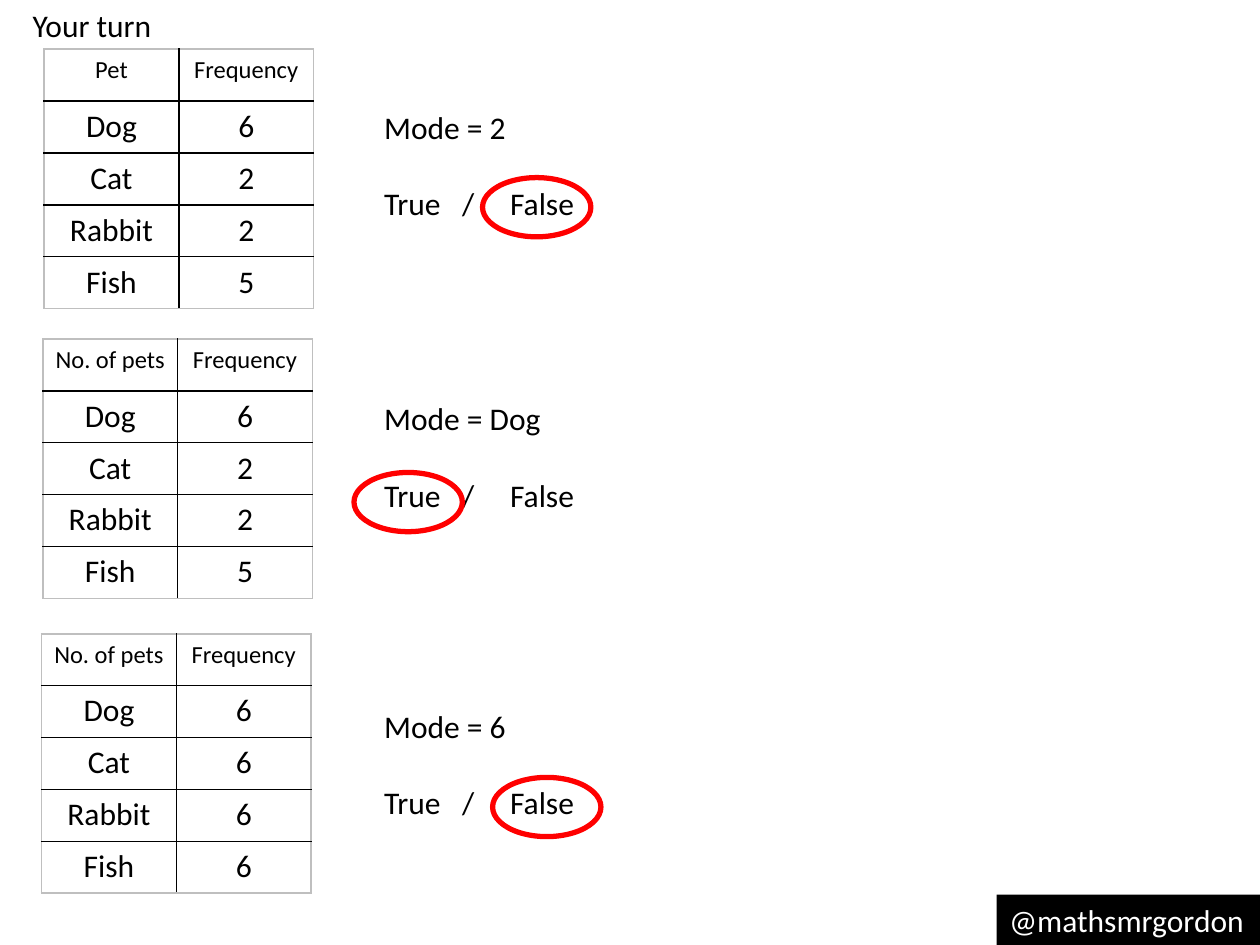
"""Build a worksheet slide with three frequency tables and true or false answers."""
import pptx
import pptx.dml.color
import pptx.enum.shapes
import pptx.enum.text
import pptx.oxml
import pptx.oxml.ns
import pptx.util

BLACK = pptx.dml.color.RGBColor(0x00, 0x00, 0x00)
WHITE = pptx.dml.color.RGBColor(0xFF, 0xFF, 0xFF)
RED = pptx.dml.color.RGBColor(0xFF, 0x00, 0x00)
GREY = pptx.dml.color.RGBColor(0xBF, 0xBF, 0xBF)

TITLE = "Your turn"
HANDLE = "@mathsmrgordon"
ANSWERS = "True\t/\tFalse"
PETS = ["Dog", "Cat", "Rabbit", "Fish"]
QUESTIONS = [
    {"heading": "Pet", "counts": [6, 2, 2, 5], "table": (35, 39),
     "claim": "Mode = 2", "claim_top": 81, "ring": (383, 141)},
    {"heading": "No. of pets", "counts": [6, 2, 2, 5], "table": (34, 269),
     "claim": "Mode = Dog", "claim_top": 312, "ring": (281, 375)},
    {"heading": "No. of pets", "counts": [6, 6, 6, 6], "table": (33, 503),
     "claim": "Mode = 6", "claim_top": 556, "ring": (391, 617)},
]

GRID_COLUMNS, GRID_ROWS = 1000, 750
TABLE_SIZE = (214, 206)
RING_SIZE = (86, 47)
CLAIM_LEFT, CLAIM_WIDTH, LINE_HEIGHT = 295, 271, 40
ANSWER_STEP = 60.5
TAB_STOPS = (62, 100)

deck = pptx.Presentation()
deck.slide_width = pptx.util.Inches(10)
deck.slide_height = pptx.util.Inches(7.5)
page = deck.slides.add_slide(deck.slide_layouts[6])


def across(columns):
    return round(deck.slide_width * columns / GRID_COLUMNS)


def down(rows):
    return round(deck.slide_height * rows / GRID_ROWS)


def area(left, top, width, height):
    return across(left), down(top), across(width), down(height)


def write(frame, text, size=18, color=BLACK, align=pptx.enum.text.PP_ALIGN.LEFT):
    para = frame.paragraphs[0]
    para.alignment = align
    span = para.add_run()
    span.text = text
    style = {"name": "Calibri", "size": pptx.util.Pt(size)}
    for name, value in style.items():
        setattr(span.font, name, value)
    span.font.color.rgb = color
    return para


def add_text(text, *place):
    box = page.shapes.add_textbox(*area(*place))
    box.text_frame.word_wrap = True
    return write(box.text_frame, text)


def add_answers(top):
    para = add_text(ANSWERS, CLAIM_LEFT, top, CLAIM_WIDTH, LINE_HEIGHT)
    stops = "".join(f'<a:tab pos="{across(stop)}" algn="l"/>' for stop in TAB_STOPS)
    para._p.get_or_add_pPr().append(pptx.oxml.parse_xml(
        f'<a:tabLst {pptx.oxml.ns.nsdecls("a")}>{stops}</a:tabLst>'))


def set_borders(cell, outer_sides):
    for side in ("L", "R", "T", "B"):
        color = GREY if side in outer_sides else BLACK
        cell._tc.get_or_add_tcPr().append(pptx.oxml.parse_xml(
            f'<a:ln{side} {pptx.oxml.ns.nsdecls("a")} w="{pptx.util.Pt(1)}">'
            f'<a:solidFill><a:srgbClr val="{color}"/></a:solidFill></a:ln{side}>'))


def add_frequency_table(heading, counts, corner):
    rows = [(heading, "Frequency"), *zip(PETS, counts)]
    last_row, last_column = len(rows) - 1, len(rows[0]) - 1
    table = page.shapes.add_table(
        len(rows), len(rows[0]), *area(*corner, *TABLE_SIZE)).table
    table.first_row = table.horz_banding = False
    for row, values in enumerate(rows):
        for column, value in enumerate(values):
            cell = table.cell(row, column)
            edges = {"L": column == 0, "R": column == last_column,
                     "T": row == 0, "B": row == last_row}
            set_borders(cell, [side for side, outer in edges.items() if outer])
            cell.fill.background()
            write(cell.text_frame, str(value), 14 if row == 0 else 18,
                  align=pptx.enum.text.PP_ALIGN.CENTER)


def add_shape(kind, *place):
    shape = page.shapes.add_shape(kind, *area(*place))
    shape.shadow.inherit = False
    return shape


def add_ring(corner):
    ring = add_shape(pptx.enum.shapes.MSO_SHAPE.OVAL, *corner, *RING_SIZE)
    ring.fill.background()
    ring.line.color.rgb = RED
    ring.line.width = pptx.util.Pt(3)


def add_handle():
    label = add_shape(pptx.enum.shapes.MSO_SHAPE.RECTANGLE, 791, 710, 209, LINE_HEIGHT)
    label.fill.solid()
    label.fill.fore_color.rgb = BLACK
    label.line.fill.background()
    label.text_frame.word_wrap = True
    write(label.text_frame, HANDLE, color=WHITE)


add_text(TITLE, 16, 0, 315, LINE_HEIGHT)
for question in QUESTIONS:
    add_frequency_table(question["heading"], question["counts"], question["table"])
    add_text(question["claim"], CLAIM_LEFT, question["claim_top"], CLAIM_WIDTH, LINE_HEIGHT)
    add_answers(question["claim_top"] + ANSWER_STEP)
    add_ring(question["ring"])
add_handle()
deck.save("out.pptx")
